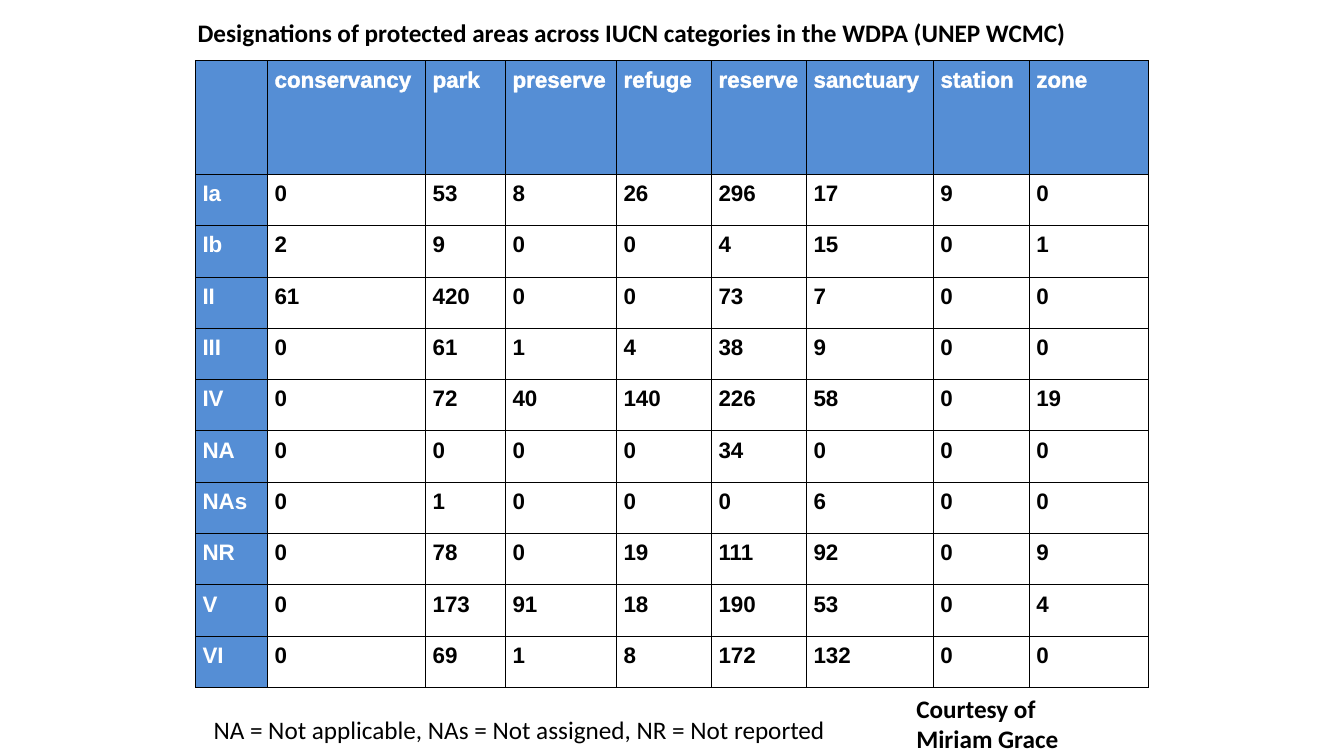
from dataclasses import dataclass
from typing import Any

from lxml.etree import SubElement
from pptx import Presentation
from pptx.dml.color import RGBColor
from pptx.enum.text import MSO_ANCHOR, MSO_AUTO_SIZE, PP_ALIGN
from pptx.oxml.ns import qn
from pptx.util import Inches, Pt

COLORS = {"header": "558ED5", "body": "FFFFFF", "light": "FFFFFF", "dark": "000000"}
LINE_WIDTH = Pt(0.75)

presentation = Presentation()
presentation.slide_width = Inches(13.33)
presentation.slide_height = Inches(7.5)


def across(percent: float) -> int:
    """Share of the slide width."""
    return round(presentation.slide_width * percent / 100)


def down(percent: float) -> int:
    """Share of the slide height."""
    return round(presentation.slide_height * percent / 100)


@dataclass
class Caption:
    """A line of text around the table, placed in percent of the slide."""
    lines: list[str]
    left: float
    top: float
    width: float
    height: float
    bold: bool = True


TITLE = Caption(
    ["Designations of protected areas across IUCN categories in the WDPA (UNEP WCMC)"],
    13.95, 1.67, 68, 5.33)
CREDIT = Caption(["Courtesy of", "Miriam Grace"], 67.44, 91.07, 12.15, 9.47)
LEGEND = Caption(
    ["NA = Not applicable, NAs = Not assigned, NR = Not reported"],
    15.15, 93.8, 48.84, 5.33, bold=False)

TABLE_LEFT, TABLE_TOP = 14.55, 8
HEADER_HEIGHT, BODY_HEIGHT = 15.07, 6.79
COLUMN_WIDTHS = [5.36, 11.76, 5.95, 8.26, 7.07, 7.07, 9.45, 7.13, 8.85]
DESIGNATIONS = ["", "conservancy", "park", "preserve", "refuge", "reserve",
                "sanctuary", "station", "zone"]
COUNTS = {
    "Ia": [0, 53, 8, 26, 296, 17, 9, 0],
    "Ib": [2, 9, 0, 0, 4, 15, 0, 1],
    "II": [61, 420, 0, 0, 73, 7, 0, 0],
    "III": [0, 61, 1, 4, 38, 9, 0, 0],
    "IV": [0, 72, 40, 140, 226, 58, 0, 19],
    "NA": [0, 0, 0, 0, 34, 0, 0, 0],
    "NAs": [0, 1, 0, 0, 0, 6, 0, 0],
    "NR": [0, 78, 0, 19, 111, 92, 0, 9],
    "V": [0, 173, 91, 18, 190, 53, 0, 4],
    "VI": [0, 69, 1, 8, 172, 132, 0, 0],
}


def apply_format(target: Any, values: dict[str, Any]) -> None:
    for name, value in values.items():
        setattr(target, name, value)


def format_font(font: Any, name: str, size: int, bold: bool, color: str) -> None:
    apply_format(font, {"name": name, "size": Pt(size), "bold": bold})
    font.color.rgb = RGBColor.from_string(COLORS[color])


def add_solid_fill(parent: Any, color: str) -> None:
    fill = SubElement(parent, qn("a:solidFill"))
    SubElement(fill, qn("a:srgbClr"), val=COLORS[color])


def write_caption(shape: Any, caption: Caption) -> None:
    apply_format(shape, {
        "left": across(caption.left), "top": down(caption.top),
        "width": across(caption.width), "height": down(caption.height)})
    frame = shape.text_frame
    frame.text = "\n".join(caption.lines)
    apply_format(frame, {"word_wrap": False, "auto_size": MSO_AUTO_SIZE.NONE,
                         "vertical_anchor": MSO_ANCHOR.TOP})
    for paragraph in frame.paragraphs:
        apply_format(paragraph, {"alignment": PP_ALIGN.LEFT, "line_spacing": 1.0,
                                 "space_before": Pt(0)})
        format_font(paragraph.runs[0].font, "Calibri", 18, caption.bold, "dark")


def add_borders(cell: Any) -> None:
    properties = cell._tc.get_or_add_tcPr()
    for position, side in enumerate(("a:lnL", "a:lnR", "a:lnT", "a:lnB")):
        line = SubElement(properties, qn(side), w=str(LINE_WIDTH))
        add_solid_fill(line, "dark")
        properties.insert(position, line)


def outline_text(run: Any) -> None:
    properties = run.font._element
    line = SubElement(properties, qn("a:ln"), w=str(LINE_WIDTH))
    add_solid_fill(line, "light")
    properties.insert(0, line)


def write_cell(cell: Any, text: str, is_heading: bool, outlined: bool) -> None:
    margins = ("margin_left", "margin_right", "margin_top", "margin_bottom")
    apply_format(cell, dict.fromkeys(margins, Inches(0.07)))
    cell.fill.solid()
    cell.fill.fore_color.rgb = RGBColor.from_string(
        COLORS["header" if is_heading else "body"])
    add_borders(cell)
    if text:
        run = cell.text_frame.paragraphs[0].add_run()
        run.text = text
        format_font(run.font, "Arial", 16, True, "light" if is_heading else "dark")
        if outlined:
            outline_text(run)


def add_designation_table(slide: Any) -> None:
    rows = [DESIGNATIONS] + [[category, *map(str, counts)]
                             for category, counts in COUNTS.items()]
    heights = [HEADER_HEIGHT] + [BODY_HEIGHT] * len(COUNTS)
    table = slide.shapes.add_table(
        len(rows), len(DESIGNATIONS), across(TABLE_LEFT), down(TABLE_TOP),
        across(sum(COLUMN_WIDTHS)), down(sum(heights))).table
    apply_format(table, {"first_row": False, "horz_banding": False})
    for column, width in zip(table.columns, COLUMN_WIDTHS):
        column.width = across(width)
    for row, height in zip(table.rows, heights):
        row.height = down(height)
    for row_index, texts in enumerate(rows):
        for column_index, text in enumerate(texts):
            write_cell(table.cell(row_index, column_index), text,
                       is_heading=row_index == 0 or column_index == 0,
                       outlined=row_index == 0)


def main() -> None:
    slide = presentation.slides.add_slide(presentation.slide_layouts[5])
    # Title
    write_caption(slide.shapes.title, TITLE)
    # Counts by category and designation
    add_designation_table(slide)
    # Credit and legend below the table
    for caption in (CREDIT, LEGEND):
        write_caption(slide.shapes.add_textbox(0, 0, 0, 0), caption)
    presentation.save("out.pptx")


if __name__ == "__main__":
    main()
